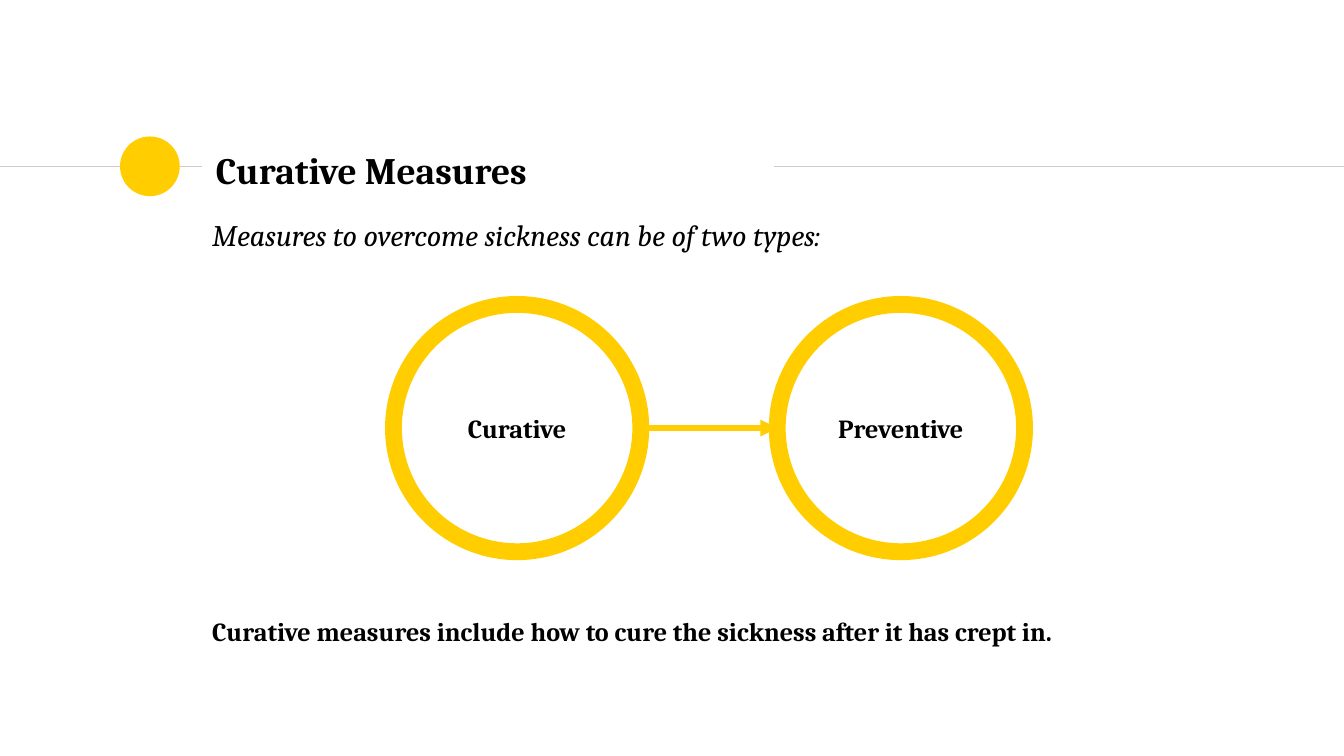
from lxml.etree import SubElement
from pptx import Presentation
from pptx.dml.color import RGBColor
from pptx.enum.shapes import MSO_CONNECTOR as Connector, MSO_SHAPE as Preset
from pptx.enum.text import MSO_ANCHOR as Anchor, MSO_AUTO_SIZE as AutoSize, PP_ALIGN as Align
from pptx.oxml.ns import qn
from pptx.util import Pt

COLORS = {"accent": "FFCD00", "rule": "CCCCCC", "text": "000000"}


class SlideBuilder:
    font = "Cambria"

    def __init__(self, slide):
        self.slide = slide

    def color(self, name):
        return RGBColor.from_string(COLORS[name])

    def set_text(self, shape, text, size, bold=False, italic=False, align=Align.LEFT):
        paragraph = shape.text_frame.paragraphs[0]
        paragraph.text = text
        paragraph.alignment = align
        font = paragraph.font
        font.name, font.size, font.bold, font.italic = self.font, Pt(size), bold, italic
        font.color.rgb = self.color("text")

    def pad(self, frame):
        frame.vertical_anchor = Anchor.MIDDLE
        frame.margin_left = frame.margin_right = Pt(7.2)
        frame.margin_top = frame.margin_bottom = Pt(7.2)

    def text(self, left, top, width, height, text, size, wrap=True, padded=False, **style):
        box = self.slide.shapes.add_textbox(Pt(left), Pt(top), Pt(width), Pt(height))
        frame = box.text_frame
        frame.word_wrap = wrap
        if padded:
            self.pad(frame)
        else:
            frame.auto_size = AutoSize.SHAPE_TO_FIT_TEXT
        self.set_text(box, text, size, **style)

    def circle(self, left, top, size):
        shape = self.slide.shapes.add_shape(Preset.OVAL, Pt(left), Pt(top), Pt(size), Pt(size))
        shape.shadow.inherit = False
        return shape

    def dot(self, left, top, size):
        shape = self.circle(left, top, size)
        shape.fill.solid()
        shape.fill.fore_color.rgb = self.color("accent")
        shape.line.fill.background()

    def ring(self, left, top, size, label):
        shape = self.circle(left, top, size)
        shape.fill.background()
        shape.line.color.rgb = self.color("accent")
        shape.line.width = Pt(9)
        shape.text_frame.word_wrap = True
        self.pad(shape.text_frame)
        self.set_text(shape, label, 14, bold=True, align=Align.CENTER)

    def line(self, start, end, y, color, width, arrow=False):
        connector = self.slide.shapes.add_connector(
            Connector.STRAIGHT, Pt(start), Pt(y), Pt(end), Pt(y))
        connector.line.color.rgb = self.color(color)
        connector.line.width = Pt(width)
        if arrow:
            SubElement(connector.get_or_add_ln(), qn("a:tailEnd"), type="triangle")
        SubElement(connector.element.spPr, qn("a:effectLst"))


def main():
    presentation = Presentation()
    presentation.slide_width, presentation.slide_height = Pt(720), Pt(405)
    builder = SlideBuilder(presentation.slides.add_slide(presentation.slide_layouts[6]))

    rule_y, dot_size = 89.1, 32
    builder.line(0, 108, rule_y, "rule", 0.75)
    builder.dot(64.3, rule_y - dot_size / 2, dot_size)
    builder.line(414.7, 720, rule_y, "rule", 0.75)
    builder.text(108.6, 73.4, 305.4, 34.6, "Curative Measures", 20, padded=True, bold=True)

    ring_left, ring_top, ring_size, ring_pitch = 210.8, 163.1, 132.5, 205.6
    for index, label in enumerate(("Curative", "Preventive")):
        builder.ring(ring_left + index * ring_pitch, ring_top, ring_size, label)
    builder.line(ring_left + ring_size, ring_left + ring_pitch,
                 ring_top + ring_size / 2, "accent", 3, arrow=True)

    builder.text(106.6, 112.3, 392.4, 26.6,
                 "Measures to overcome sickness can be of two types:", 16, wrap=False, italic=True)
    builder.text(106.6, 326.2, 579.6, 24.5,
                 "Curative measures include how to cure the sickness after it has crept in.",
                 14, bold=True)
    presentation.save("out.pptx")


if __name__ == "__main__":
    main()
